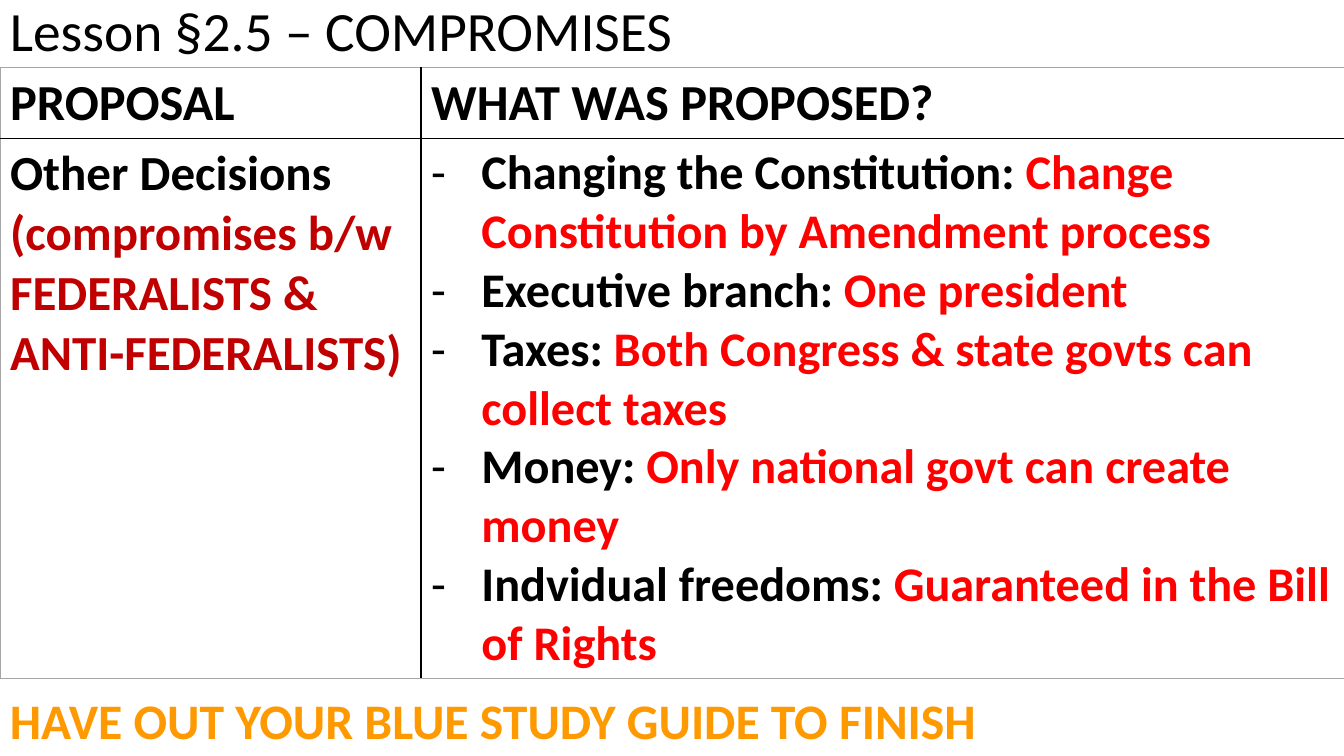
import pptx
import pptx.util
import pptx.oxml
import pptx.oxml.ns
import pptx.dml.color
import pptx.enum.text
from lxml import etree

Cm = pptx.util.Cm
Pt = pptx.util.Pt
qn = pptx.oxml.ns.qn
ANCHOR = pptx.enum.text.MSO_ANCHOR

THEME = {
    "font": "Calibri",
    "black": "000000", "dark": "C00000", "red": "FF0000",
    "gold": "FF9900", "edge": "A6A6A6",
    "title": 39.6, "head": 36, "side": 35, "list": 34.5, "note": 35.5,
}
WIDE = 33.87


def add_run(para, text, size, color, bold=True):
    run = para.add_run()
    run.text = text
    style = {"name": THEME["font"], "size": Pt(THEME[size]), "bold": bold}
    for key, value in style.items():
        setattr(run.font, key, value)
    run.font.color.rgb = pptx.dml.color.RGBColor.from_string(THEME[color])


def add_line(cell, side, color, width):
    line = etree.SubElement(cell._tc.get_or_add_tcPr(), qn("a:" + side), w=str(Pt(width)))
    fill = etree.SubElement(line, qn("a:solidFill"))
    etree.SubElement(fill, qn("a:srgbClr"), val=THEME[color])


deck = pptx.Presentation()
deck.slide_width, deck.slide_height = Cm(WIDE), Cm(19.05)
slide = deck.slides.add_slide(deck.slide_layouts[6])

# Title and closing note
bands = [
    ("Lesson §2.5 – COMPROMISES", 0, 1.7, "title", "black", False, ANCHOR.MIDDLE, 0.9),
    ("HAVE OUT YOUR BLUE STUDY GUIDE TO FINISH", 17.25, 1.78, "note", "gold", True, ANCHOR.TOP, 1.0),
]
for text, top, high, size, color, bold, anchor, space in bands:
    frame = slide.shapes.add_textbox(0, Cm(top), Cm(WIDE), Cm(high)).text_frame
    for key, value in {"word_wrap": True, "vertical_anchor": anchor}.items():
        setattr(frame, key, value)
    para = frame.paragraphs[0]
    para.line_spacing = space
    add_run(para, text, size, color, bold)

# Table grid
table = slide.shapes.add_table(2, 2, 0, Cm(1.7), Cm(WIDE), Cm(15.4)).table
for key, value in {"first_row": False, "horz_banding": False}.items():
    setattr(table, key, value)
for col, wide in zip(table.columns, (10.61, 23.26)):
    col.width = Cm(wide)
for row, high in zip(table.rows, (1.8, 13.6)):
    row.height = Cm(high)

# Borders: black inside, pale around the edge
for r in range(2):
    for c in range(2):
        cell = table.cell(r, c)
        inner = {"lnL": c == 1, "lnR": c == 0, "lnT": r == 1, "lnB": r == 0}
        for side, inside in inner.items():
            add_line(cell, side, *(("black", 1) if inside else ("edge", 0.5)))
        cell.fill.background()

# Header row
for c, text in enumerate(("PROPOSAL", "WHAT WAS PROPOSED?")):
    add_run(table.cell(0, c).text_frame.paragraphs[0], text, "head", "black")

# Left cell
para = table.cell(1, 0).text_frame.paragraphs[0]
add_run(para, "Other Decisions ", "side", "black")
add_run(para, "(compromises b/w FEDERALISTS & ANTI-FEDERALISTS)", "side", "dark")

# Dashed list of decisions
points = [
    ("Changing the Constitution: ", "Change Constitution by Amendment process"),
    ("Executive branch: ", "One president"),
    ("Taxes: ", "Both Congress & state govts can collect taxes"),
    ("Money: ", "Only national govt can create money"),
    ("Indvidual freedoms: ", "Guaranteed in the Bill of Rights"),
]
frame = table.cell(1, 1).text_frame
for i, (topic, answer) in enumerate(points):
    para = frame.add_paragraph() if i else frame.paragraphs[0]
    props = para._p.get_or_add_pPr()
    for key, value in {"marL": Cm(1.27), "indent": -Cm(1.27)}.items():
        props.set(key, str(value))
    etree.SubElement(props, qn("a:buFont"), typeface=THEME["font"])
    etree.SubElement(props, qn("a:buChar"), char="-")
    add_run(para, topic, "list", "black")
    add_run(para, answer, "list", "red")

deck.save("out.pptx")
